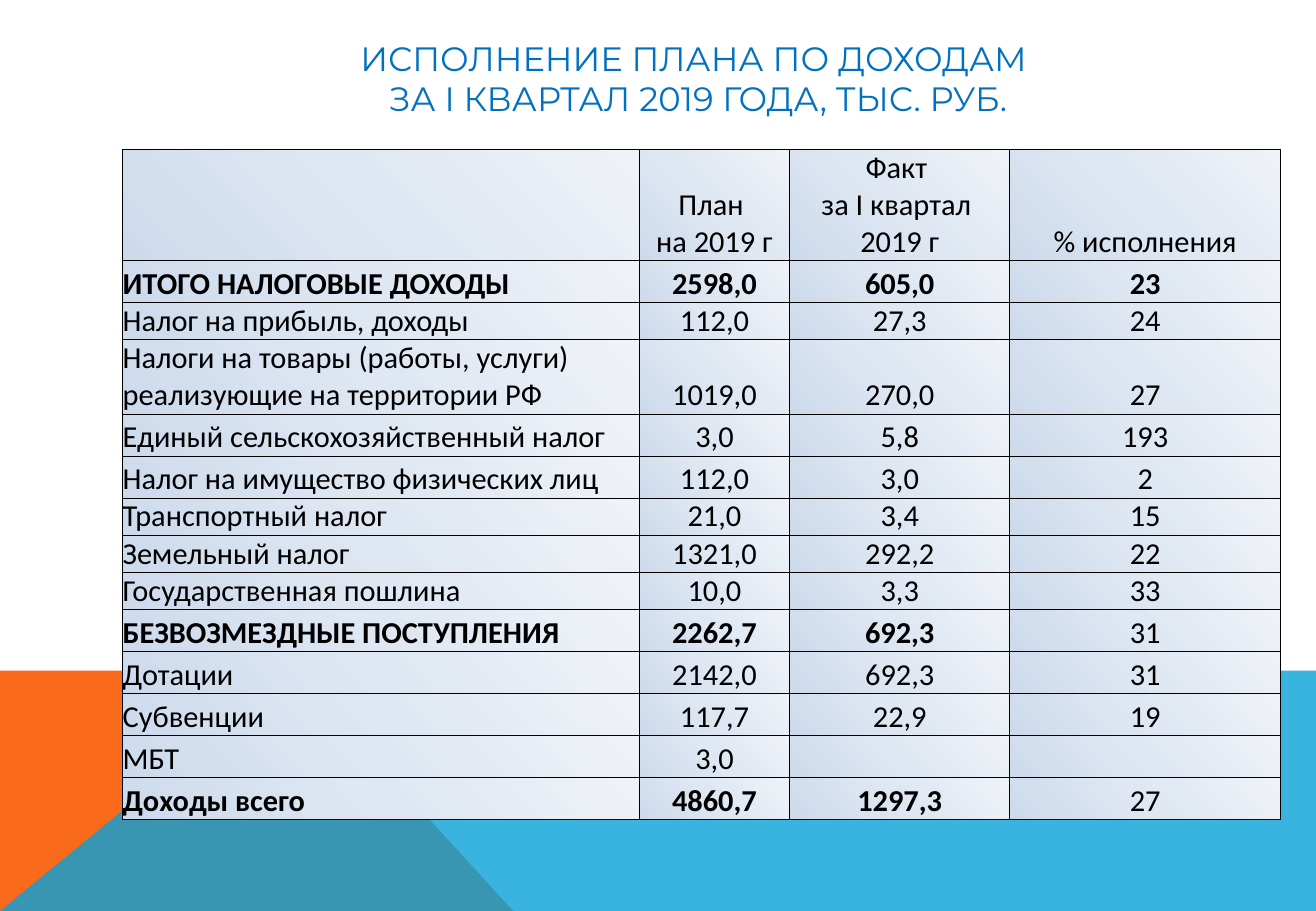
import pptx
import pptx.util
import pptx.dml.color
import pptx.enum.text
import pptx.oxml
import pptx.oxml.ns

Inches, Pt = pptx.util.Inches, pptx.util.Pt
RGBColor = pptx.dml.color.RGBColor
Align, Anchor = pptx.enum.text.PP_ALIGN, pptx.enum.text.MSO_ANCHOR

WIDTH, HEIGHT = Inches(10.83), Inches(7.5)
ORANGE = RGBColor(0xF9, 0x6A, 0x1B)
SKY = RGBColor(0x08, 0xA1, 0xD9)
TITLE_BLUE = RGBColor(0x00, 0x70, 0xC0)
BLACK = RGBColor(0, 0, 0)
SHADES = (
    (0, RGBColor(0xCD, 0xDA, 0xEC)),
    (50, RGBColor(0xDF, 0xE7, 0xF2)),
    (100, RGBColor(0xEF, 0xF3, 0xF8)),
)

TITLE = "ИСПОЛНЕНИЕ ПЛАНА ПО ДОХОДАМ \vЗА I КВАРТАЛ 2019 ГОДА, ТЫС. РУБ."
COLUMNS = (4.25, 1.24, 1.81, 2.23)
LINE, LOOSE = 22, 24.9
INCOME = (
    (3 * LINE, 0, ("", "План \nна 2019 г", "Факт \nза I квартал \n2019 г", "% исполнения")),
    (LOOSE, 4, ("ИТОГО НАЛОГОВЫЕ ДОХОДЫ", "2598,0", "605,0", "23")),
    (LINE, 0, ("Налог на прибыль, доходы", "112,0", "27,3", "24")),
    (2 * LINE, 0, ("Налоги на товары (работы, услуги) реализующие на территории РФ",
                   "1019,0", "270,0", "27")),
    (LOOSE, 0, ("Единый сельскохозяйственный налог", "3,0", "5,8", "193")),
    (LOOSE, 0, ("Налог на имущество физических лиц", "112,0", "3,0", "2")),
    (LINE, 0, ("Транспортный налог", "21,0", "3,4", "15")),
    (LINE, 0, ("Земельный налог", "1321,0", "292,2", "22")),
    (LINE, 0, ("Государственная пошлина", "10,0", "3,3", "33")),
    (LOOSE, 3, ("БЕЗВОЗМЕЗДНЫЕ ПОСТУПЛЕНИЯ", "2262,7", "692,3", "31")),
    (LOOSE, 0, ("Дотации", "2142,0", "692,3", "31")),
    (LOOSE, 0, ("Субвенции", "117,7", "22,9", "19")),
    (LOOSE, 0, ("МБТ", "3,0", "", "")),
    (LOOSE, 3, ("Доходы всего", "4860,7", "1297,3", "27")),
)


def style_paragraph(paragraph, font_name, size, color, align, bold=False):
    """Set the alignment and font of a paragraph."""
    paragraph.alignment = align
    font = paragraph.font
    font.name, font.size, font.bold = font_name, Pt(size), bold
    font.color.rgb = color


def add_band(slide, corners, color, opacity=100):
    """Draw a flat polygon whose corners are shares of the slide's size."""
    points = [(int(x * WIDTH), int(y * HEIGHT)) for x, y in corners]
    builder = slide.shapes.build_freeform(*points[0])
    builder.add_line_segments(points[1:], close=True)
    band = builder.convert_to_shape()
    band.shadow.inherit = False
    band.fill.solid()
    band.fill.fore_color.rgb = color
    band.line.fill.background()
    if opacity < 100:
        tint = band.fill._xPr.find(".//" + pptx.oxml.ns.qn("a:srgbClr"))
        tint.append(pptx.oxml.parse_xml(
            f'<a:alpha {pptx.oxml.ns.nsdecls("a")} val="{opacity * 1000}"/>'))


def add_title(slide):
    """Write the centred slide title."""
    title = slide.shapes.add_textbox(Inches(1.2), Inches(0.13), Inches(9.09), Inches(1.02))
    frame = title.text_frame
    frame.word_wrap = True
    frame.vertical_anchor = Anchor.MIDDLE
    frame.text = TITLE
    style_paragraph(frame.paragraphs[0], "Montserrat", 20, TITLE_BLUE, Align.CENTER)


def paint_cell(cell):
    """Give a cell thin black borders and a glow from its lower left corner."""
    ns = pptx.oxml.ns.nsdecls("a")
    properties = cell._tc.get_or_add_tcPr()
    for side in "LRTB":
        properties.append(pptx.oxml.parse_xml(
            f'<a:ln{side} {ns} w="{Pt(0.5)}"><a:solidFill><a:srgbClr val="{BLACK}"/>'
            f'</a:solidFill></a:ln{side}>'))
    stops = "".join(f'<a:gs pos="{place * 1000}"><a:srgbClr val="{shade}"/></a:gs>'
                    for place, shade in SHADES)
    properties.append(pptx.oxml.parse_xml(
        f'<a:gradFill {ns} rotWithShape="1"><a:gsLst>{stops}</a:gsLst>'
        '<a:path path="circle"><a:fillToRect t="100000" r="100000"/></a:path></a:gradFill>'))


def fill_cell(cell, text, align, bold):
    """Write a table cell without margins, resting on its lower edge."""
    cell.margin_left = cell.margin_right = cell.margin_top = cell.margin_bottom = 0
    cell.vertical_anchor = Anchor.BOTTOM
    cell.text = text
    for paragraph in cell.text_frame.paragraphs:
        style_paragraph(paragraph, "Calibri", 18, BLACK, align, bold)
    paint_cell(cell)


def add_income_table(slide):
    """Build the table of planned and received income."""
    height = Pt(sum(row_height for row_height, _, _ in INCOME))
    table = slide.shapes.add_table(len(INCOME), len(COLUMNS), Inches(1.01), Inches(1.23),
                                   Inches(sum(COLUMNS)), height).table
    table.first_row = table.horz_banding = False
    for column, width in zip(table.columns, COLUMNS):
        column.width = Inches(width)
    for row, (row_height, bold_cells, texts) in zip(table.rows, INCOME):
        row.height = Pt(row_height)
        for index, (cell, text) in enumerate(zip(row.cells, texts)):
            align = Align.CENTER if index else Align.LEFT
            fill_cell(cell, text, align, index < bold_cells)


def main():
    """Compose the slide and save it."""
    deck = pptx.Presentation()
    deck.slide_width, deck.slide_height = WIDTH, HEIGHT
    slide = deck.slides.add_slide(deck.slide_layouts[6])
    horizon, peak = 0.736, 0.223
    add_band(slide, ((0, 1), (0, horizon), (peak, horizon), (0.39, 1)), ORANGE)
    add_band(slide, ((0, 1), (peak, horizon), (1, horizon), (1, 1)), SKY, 80)
    add_title(slide)
    add_income_table(slide)
    deck.save("out.pptx")


if __name__ == "__main__":
    main()
